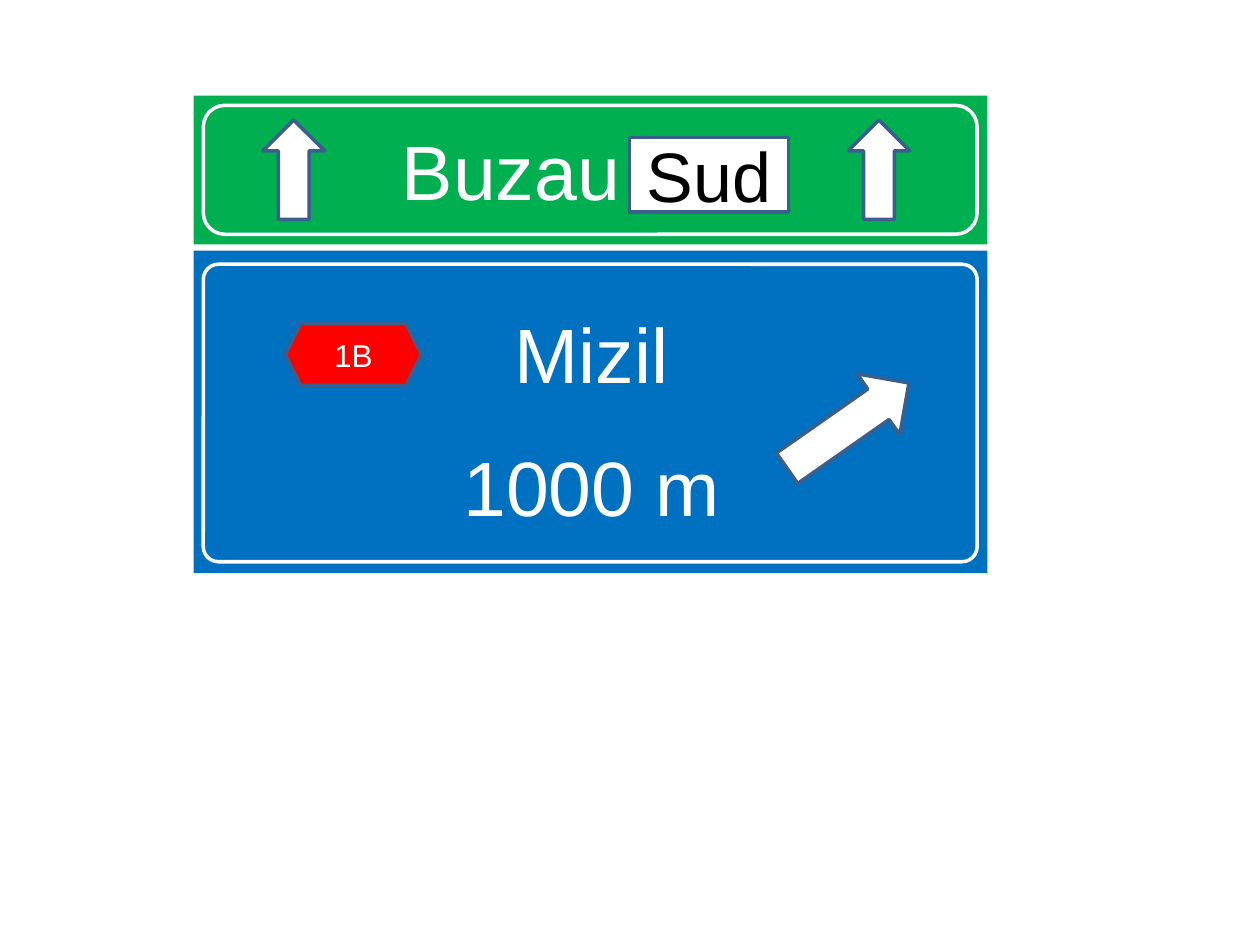
from pptx import Presentation
from pptx.dml.color import RGBColor
from pptx.enum.shapes import MSO_SHAPE
from pptx.enum.text import MSO_ANCHOR, PP_ALIGN
from pptx.util import Pt

RECT, ROUND = MSO_SHAPE.RECTANGLE, MSO_SHAPE.ROUNDED_RECTANGLE
UP, RIGHT, HEX = MSO_SHAPE.UP_ARROW, MSO_SHAPE.RIGHT_ARROW, MSO_SHAPE.HEXAGON
MIDDLE, TOP = MSO_ANCHOR.MIDDLE, MSO_ANCHOR.TOP
CENTER = PP_ALIGN.CENTER
COLORS = {"green": "00B050", "blue": "0070C0", "red": "FF0000",
          "white": "FFFFFF", "black": "000000", "edge": "3A5F8C"}

prs = Presentation()
prs.slide_width, prs.slide_height = Pt(720), Pt(540)
slide = prs.slides.add_slide(prs.slide_layouts[6])


def color(name):
    return RGBColor.from_string(COLORS[name])


def draw(kind, box, text="", fill=None, line=None, size=44, ink="white",
         anchor=MIDDLE, inset=(7.2, 3.6, 7.2, 3.6), gap=0):
    shape = slide.shapes.add_shape(kind, *[Pt(v) for v in box])
    shape.shadow.inherit = False
    if fill:
        shape.fill.solid()
        shape.fill.fore_color.rgb = color(fill)
    else:
        shape.fill.background()
    if line:
        shape.line.color.rgb = color(line)
        shape.line.width = Pt(2)
    else:
        shape.line.fill.background()
    if text:
        frame = shape.text_frame
        frame.word_wrap = True
        frame.vertical_anchor = anchor
        (frame.margin_left, frame.margin_top,
         frame.margin_right, frame.margin_bottom) = [Pt(v) for v in inset]
        frame.text = text
        for i, para in enumerate(frame.paragraphs):
            para.alignment = CENTER
            para.space_before = Pt(gap if i else 0)
            para.font.name = "Arial"
            para.font.size = Pt(size)
            para.font.color.rgb = color(ink)
    return shape


# Sign panels
draw(RECT, (110.6, 54.6, 453.6, 85), "Buzau Sud", fill="green")
draw(RECT, (110.6, 143.2, 453.6, 184.3), "Mizil\n1000 m", fill="blue",
     anchor=TOP, inset=(8.6, 32, 7.2, 17.3), gap=23)

# Exit arrow and road number
exit_arrow = draw(RIGHT, (442.1, 222, 85, 42.5), fill="white", line="edge")
exit_arrow.rotation = 325
draw(HEX, (163, 185, 77.8, 35.3), "1B", fill="red", line="edge", size=18)

# Straight-on arrows
for left in (150.2, 484.6):
    draw(UP, (left, 68.6, 35.3, 56.8), fill="white", line="edge")

# Inner borders
for top, height, curve in ((60.2, 73.7, 0.167), (151, 170, 0.051)):
    border = draw(ROUND, (116.2, top, 442.2, height), line="white")
    border.adjustments[0] = curve

# District plate
draw(RECT, (359.8, 78.6, 90.7, 42.5), "Sud", fill="white", line="edge",
     size=40, ink="black")

prs.save("out.pptx")
